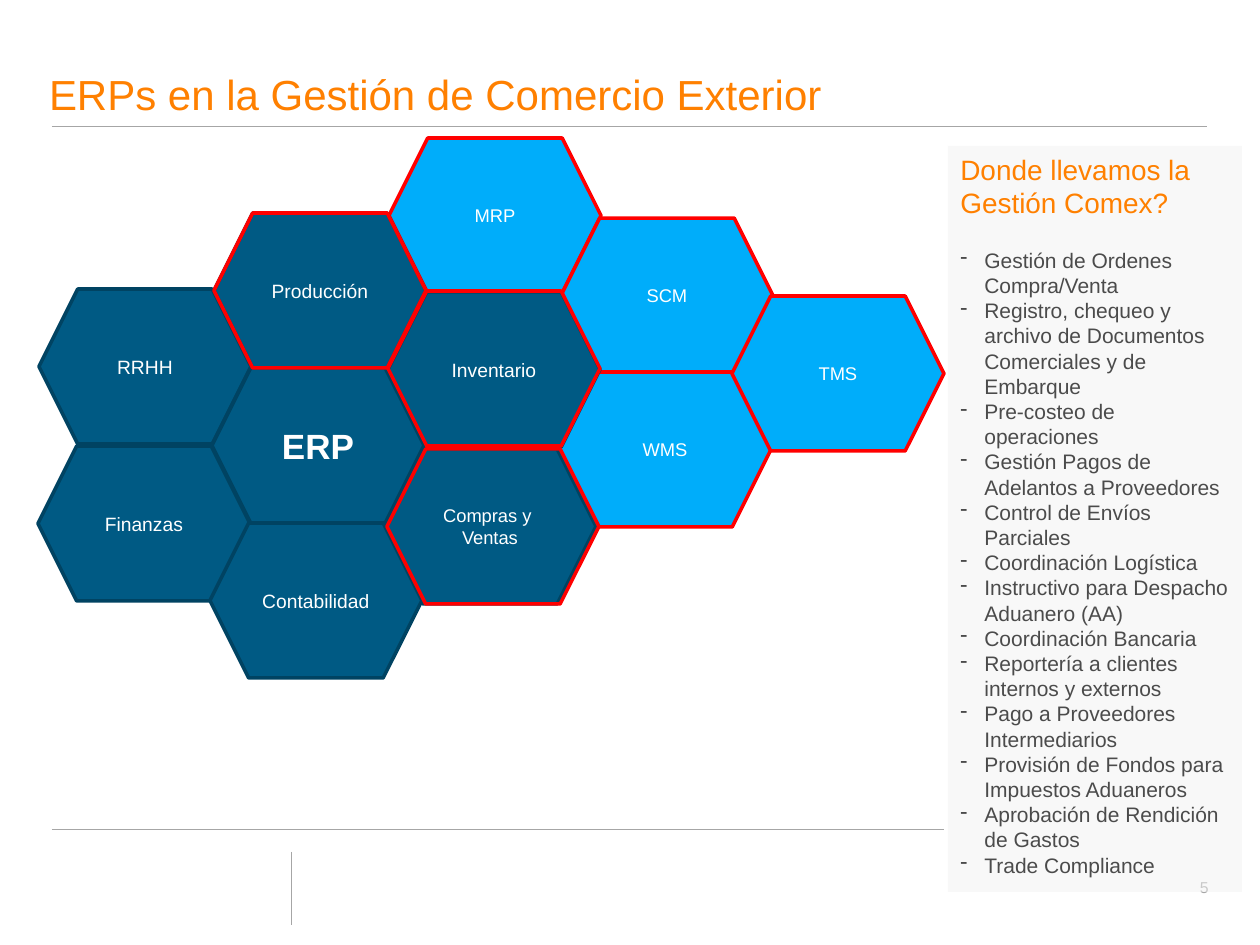
from dataclasses import dataclass

from lxml import etree
from pptx import Presentation
from pptx.dml.color import RGBColor
from pptx.enum.shapes import MSO_CONNECTOR, MSO_SHAPE
from pptx.enum.text import MSO_ANCHOR, PP_ALIGN
from pptx.oxml.ns import qn
from pptx.util import Emu, Pt

HEX, RECT = MSO_SHAPE.HEXAGON, MSO_SHAPE.RECTANGLE
LINE = MSO_CONNECTOR.STRAIGHT
LEFT, MID, RIGHT = PP_ALIGN.LEFT, PP_ALIGN.CENTER, PP_ALIGN.RIGHT
TOP, CENTER, BOTTOM = MSO_ANCHOR.TOP, MSO_ANCHOR.MIDDLE, MSO_ANCHOR.BOTTOM


@dataclass(frozen=True)
class Theme:
    font: str = "Arial"
    orange: str = "FF8000"
    white: str = "FFFFFF"
    navy: str = "005A84"
    edge: str = "004362"
    sky: str = "00ADFA"
    red: str = "FF0000"
    rule: str = "A6A6A6"
    panel: str = "F2F2F2"
    ink: str = "4B4B4B"
    title: float = 24
    core: float = 20
    head: float = 16
    body: float = 12
    cell: float = 11
    small: float = 10.5
    page: float = 9


T = Theme()

# Content
TITLE = "ERPs en la Gestión de Comercio Exterior"
PAGE = "5"
RULES = [(291, 852, 291, 925), (52, 829, 1207, 829), (52, 126, 1207, 126)]

SKY = (T.sky, T.red)
NAVY = (T.navy, T.edge)
RING = (None, T.red)
SIZE = (212, 155)
# left, top, style, type size, lines of text; back to front
CELLS = [
    (389, 138, SKY, T.small, ["MRP"]),
    (561, 218, SKY, T.small, ["SCM"]),
    (559, 372, SKY, T.small, ["WMS"]),
    (214, 213, NAVY, T.cell, ["Producción"]),
    (384, 449, NAVY, T.small, ["Compras y ", "Ventas"]),
    (388, 292, NAVY, T.cell, ["Inventario"]),
    (39, 289, NAVY, T.cell, ["RRHH"]),
    (38, 446, NAVY, T.cell, ["Finanzas"]),
    (210, 523, NAVY, T.cell, ["Contabilidad"]),
    (212, 368, NAVY, T.core, ["ERP"]),
    (387, 449, RING, T.cell, []),
    (388, 291, RING, T.cell, []),
    (214, 213, RING, T.cell, []),
    (732, 296, SKY, T.small, ["TMS"]),
]

HEAD = "Donde llevamos la Gestión Comex?"
TASKS = [
    "Gestión de Ordenes Compra/Venta",
    "Registro, chequeo y archivo de Documentos Comerciales y de Embarque",
    "Pre-costeo de operaciones",
    "Gestión Pagos de Adelantos a Proveedores",
    "Control de Envíos Parciales",
    "Coordinación Logística",
    "Instructivo para Despacho Aduanero (AA)",
    "Coordinación Bancaria",
    "Reportería a clientes internos y externos",
    "Pago a Proveedores Intermediarios",
    "Provisión de Fondos para Impuestos Aduaneros",
    "Aprobación de Rendición de Gastos",
    "Trade Compliance",
]


# Helpers
def px(n):
    return Emu(round(n * 914400 / 126))


def rgb(code):
    return RGBColor.from_string(code)


def style(para, size, color, align=LEFT, bold=False):
    para.alignment = align
    font = para.font
    font.name, font.size, font.bold = T.font, Pt(size), bold
    font.color.rgb = rgb(color)


def frame(shape, anchor):
    text = shape.text_frame
    text.word_wrap = True
    text.vertical_anchor = anchor
    return text


def write(text, lines, *look):
    for i, line in enumerate(lines):
        para = text.add_paragraph() if i else text.paragraphs[0]
        para.text = line
        style(para, *look)


def shape(kind, box, fill, edge=None):
    item = slide.shapes.add_shape(kind, *map(px, box))
    item.shadow.inherit = False
    if fill:
        item.fill.solid()
        item.fill.fore_color.rgb = rgb(fill)
    else:
        item.fill.background()
    if edge:
        item.line.color.rgb = rgb(edge)
        item.line.width = Pt(2)
    else:
        item.line.fill.background()
    return item


def label(box, anchor):
    return frame(slide.shapes.add_textbox(*map(px, box)), anchor)


def bullet(para, mark):
    props = para._p.get_or_add_pPr()
    props.set("marL", str(px(24)))
    props.set("indent", str(-px(24)))
    etree.SubElement(props, qn("a:buChar")).set("char", mark)


deck = Presentation()
deck.slide_width, deck.slide_height = px(1260), px(945)
slide = deck.slides.add_slide(deck.slide_layouts[6])

# Rules and page number
for ends in RULES:
    rule = slide.shapes.add_connector(LINE, *map(px, ends))
    rule.line.color.rgb = rgb(T.rule)
    rule.line.width = Pt(0.5)
    etree.SubElement(rule._element.spPr, qn("a:effectLst"))
write(label((1167, 872, 54, 32), TOP), [PAGE], T.page, T.rule, RIGHT)

# White ground beneath the panel
shape(RECT, (946, 805, 296, 64), T.white, T.white)

# Honeycomb
for x, y, (fill, edge), size, lines in CELLS:
    cell = shape(HEX, (x, y, *SIZE), fill, edge)
    write(frame(cell, CENTER), lines, size, T.white, MID, size == T.core)

# Title
text = label((49, 14, 1016, 106), BOTTOM)
text.margin_left = text.margin_right = text.margin_top = text.margin_bottom = 0
write(text, [TITLE], T.title, T.orange)
text.paragraphs[0].line_spacing = 0.9

# Side panel
panel = shape(RECT, (948, 146, 294, 746), T.panel)
tint = panel.fill._xPr.find(qn("a:solidFill"))[0]
etree.SubElement(tint, qn("a:alpha")).set("val", "47000")
text = frame(panel, TOP)
write(text, [HEAD], T.head, T.orange)
text.paragraphs[0].space_after = Pt(16)
for task in TASKS:
    para = text.add_paragraph()
    para.text = task
    bullet(para, "-")
    style(para, T.body, T.ink)

deck.save("out.pptx")
